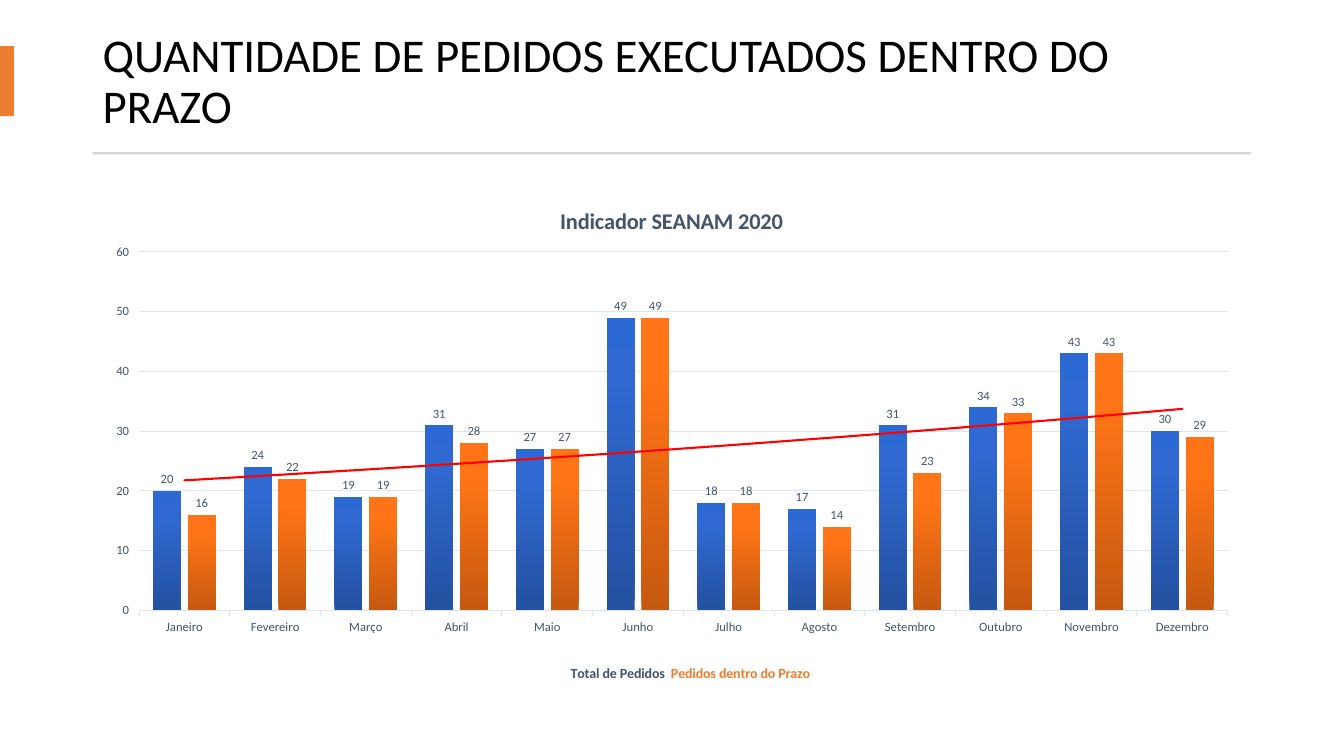
from dataclasses import dataclass

from lxml import etree
from pptx import Presentation
from pptx.chart.data import CategoryChartData
from pptx.dml.color import RGBColor
from pptx.enum.chart import XL_CHART_TYPE as ChartType
from pptx.enum.chart import XL_LABEL_POSITION as LabelPosition
from pptx.enum.chart import XL_TICK_MARK as TickMark
from pptx.enum.shapes import MSO_SHAPE as Shape
from pptx.enum.text import MSO_ANCHOR as Anchor
from pptx.oxml import parse_xml
from pptx.oxml.ns import nsdecls, qn
from pptx.util import Pt


@dataclass(frozen=True)
class Theme:
    font: str = "Calibri"
    black: str = "000000"
    slate: str = "44546A"
    accent: str = "ED7D31"
    rule: str = "D5D5D5"
    grid: str = "E0E5EB"
    trend: str = "FF0000"
    blue_bars: tuple = ((0, "2451A1"), (80, "2F69D1"), (100, "2C69D5"))
    orange_bars: tuple = ((0, "C65910"), (80, "FF7416"), (100, "FF7517"))
    title_size: float = 33.5
    chart_title_size: float = 16
    axis_title_size: float = 10
    label_size: float = 9


MONTHS = ("Janeiro", "Fevereiro", "Março", "Abril", "Maio", "Junho", "Julho",
          "Agosto", "Setembro", "Outubro", "Novembro", "Dezembro")
TOTAL_ORDERS = (20, 24, 19, 31, 27, 49, 18, 17, 31, 34, 43, 30)
ORDERS_ON_TIME = (16, 22, 19, 28, 27, 49, 18, 14, 23, 33, 43, 29)


def style_font(font, *, name, size, color, bold=False):
    font.name = name
    font.size = Pt(size)
    font.bold = bold
    font.color.rgb = RGBColor.from_string(color)


def add_text(paragraph, text, **text_format):
    run = paragraph.add_run()
    run.text = text
    style_font(run.font, **text_format)


def place(element, **fractions):
    """Set a manual layout, as fractions of the chart, on a title or plot area."""
    for old_layout in element.findall(qn("c:layout")):
        element.remove(old_layout)
    target = '<c:layoutTarget val="inner"/>' if "w" in fractions else ""
    modes = '<c:xMode val="edge"/><c:yMode val="edge"/>'
    values = "".join(f'<c:{key} val="{value}"/>' for key, value in fractions.items())
    layout = parse_xml(f'<c:layout {nsdecls("c")}><c:manualLayout>'
                       f'{target}{modes}{values}</c:manualLayout></c:layout>')
    element.insert(1 if element.find(qn("c:tx")) is not None else 0, layout)


def fill_gradient(series, stops, angle=270):
    properties = series._element.get_or_add_spPr()
    stop_xml = "".join(f'<a:gs pos="{position * 1000}"><a:srgbClr val="{color}"/></a:gs>'
                       for position, color in stops)
    properties.insert(0, parse_xml(
        f'<a:gradFill {nsdecls("a")}><a:gsLst>{stop_xml}</a:gsLst>'
        f'<a:lin ang="{angle * 60000}" scaled="0"/></a:gradFill>'))


def add_trend(series, color, width):
    trend = parse_xml(
        f'<c:trendline {nsdecls("c", "a")}><c:spPr><a:ln w="{Pt(width)}" cap="rnd">'
        f'<a:solidFill><a:srgbClr val="{color}"/></a:solidFill></a:ln></c:spPr>'
        '<c:trendlineType val="exp"/><c:dispRSqr val="0"/><c:dispEq val="0"/>'
        '</c:trendline>')
    series._element.find(qn("c:cat")).addprevious(trend)


class SlideBuilder:
    def __init__(self, slide, theme):
        self.slide = slide
        self.theme = theme

    def text_format(self, size, color, bold=False):
        return {"name": self.theme.font, "size": size, "color": color, "bold": bold}

    def rectangle(self, left, top, width, height, color):
        shape = self.slide.shapes.add_shape(
            Shape.RECTANGLE, Pt(left), Pt(top), Pt(width), Pt(height))
        shape.shadow.inherit = False
        shape.fill.solid()
        shape.fill.fore_color.rgb = RGBColor.from_string(color)
        shape.line.fill.background()

    def title(self, left, top, width, height, text):
        box = self.slide.shapes.add_textbox(Pt(left), Pt(top), Pt(width), Pt(height))
        frame = box.text_frame
        frame.word_wrap = True
        frame.vertical_anchor = Anchor.MIDDLE
        paragraph = frame.paragraphs[0]
        paragraph.line_spacing = 0.9
        add_text(paragraph, text, **self.text_format(self.theme.title_size, self.theme.black))

    def column_chart(self, left, top, width, height, categories, series_values):
        data = CategoryChartData()
        data.categories = categories
        for name, values in series_values.items():
            data.add_series(name, values)
        chart = self.slide.shapes.add_chart(
            ChartType.COLUMN_CLUSTERED, Pt(left), Pt(top), Pt(width), Pt(height), data).chart
        chart.has_legend = False
        style_font(chart.font, **self.text_format(10, self.theme.black))
        place(chart._chartSpace.chart.plotArea, x=0.04, y=0.14, w=0.94, h=0.71)
        plot = chart.plots[0]
        plot.gap_width, plot.overlap, plot.vary_by_categories = 100, -24, False
        return chart

    def chart_title(self, title, x, y, size, parts):
        paragraph = title.text_frame.paragraphs[0]
        for text, color in parts:
            add_text(paragraph, text, **self.text_format(size, color, bold=True))
        place(title._element, x=x, y=y)

    def line(self, line_format, color):
        line_format.color.rgb = RGBColor.from_string(color)
        line_format.width = Pt(0.75)

    def axes(self, chart, maximum, step):
        for axis in (chart.category_axis, chart.value_axis):
            axis.major_tick_mark = TickMark.OUTSIDE
            axis.minor_tick_mark = TickMark.NONE
            style_font(axis.tick_labels.font,
                       **self.text_format(self.theme.label_size, self.theme.slate))
        self.line(chart.category_axis.format.line, self.theme.grid)
        value_axis = chart.value_axis
        value_axis.minimum_scale, value_axis.maximum_scale = 0, maximum
        value_axis.major_unit = step
        value_axis.format.line.fill.background()
        self.line(value_axis.major_gridlines.format.line, self.theme.grid)

    def series(self, series, stops):
        fill_gradient(series, stops)
        labels = series.data_labels
        labels.show_value = True
        labels.position = LabelPosition.OUTSIDE_END
        style_font(labels.font, **self.text_format(self.theme.label_size, self.theme.slate))


def main():
    theme = Theme()
    presentation = Presentation()
    presentation.slide_width, presentation.slide_height = Pt(960), Pt(540)
    slide = presentation.slides.add_slide(presentation.slide_layouts[6])
    builder = SlideBuilder(slide, theme)
    left, width = 66.25, 827.25

    # Heading with side accent and rule
    builder.title(left, 19.5, width, 79, "QUANTIDADE DE PEDIDOS EXECUTADOS DENTRO DO PRAZO")
    builder.rectangle(0, 33, 10, 50, theme.accent)
    builder.rectangle(left, 108.75, width, 1.5, theme.rule)

    # Monthly orders chart
    chart = builder.column_chart(left, 129.5, width, 361, MONTHS, {
        "Total de Pedidos": TOTAL_ORDERS, "Pedidos dentro do Prazo": ORDERS_ON_TIME})
    builder.axes(chart, maximum=60, step=10)
    for series, stops in zip(chart.plots[0].series, (theme.blue_bars, theme.orange_bars)):
        builder.series(series, stops)
    add_trend(chart.plots[0].series[0], theme.trend, 1.5)

    # Chart title, and axis title that serves as the colour key
    builder.chart_title(chart.chart_title, 0.4, 0.04, theme.chart_title_size,
                        [("Indicador SEANAM 2020", theme.slate)])
    builder.chart_title(chart.category_axis.axis_title, 0.41, 0.95, theme.axis_title_size,
                        [("Total de Pedidos ", theme.slate),
                         (" Pedidos dentro do Prazo", theme.accent)])

    presentation.save("out.pptx")


if __name__ == "__main__":
    main()
